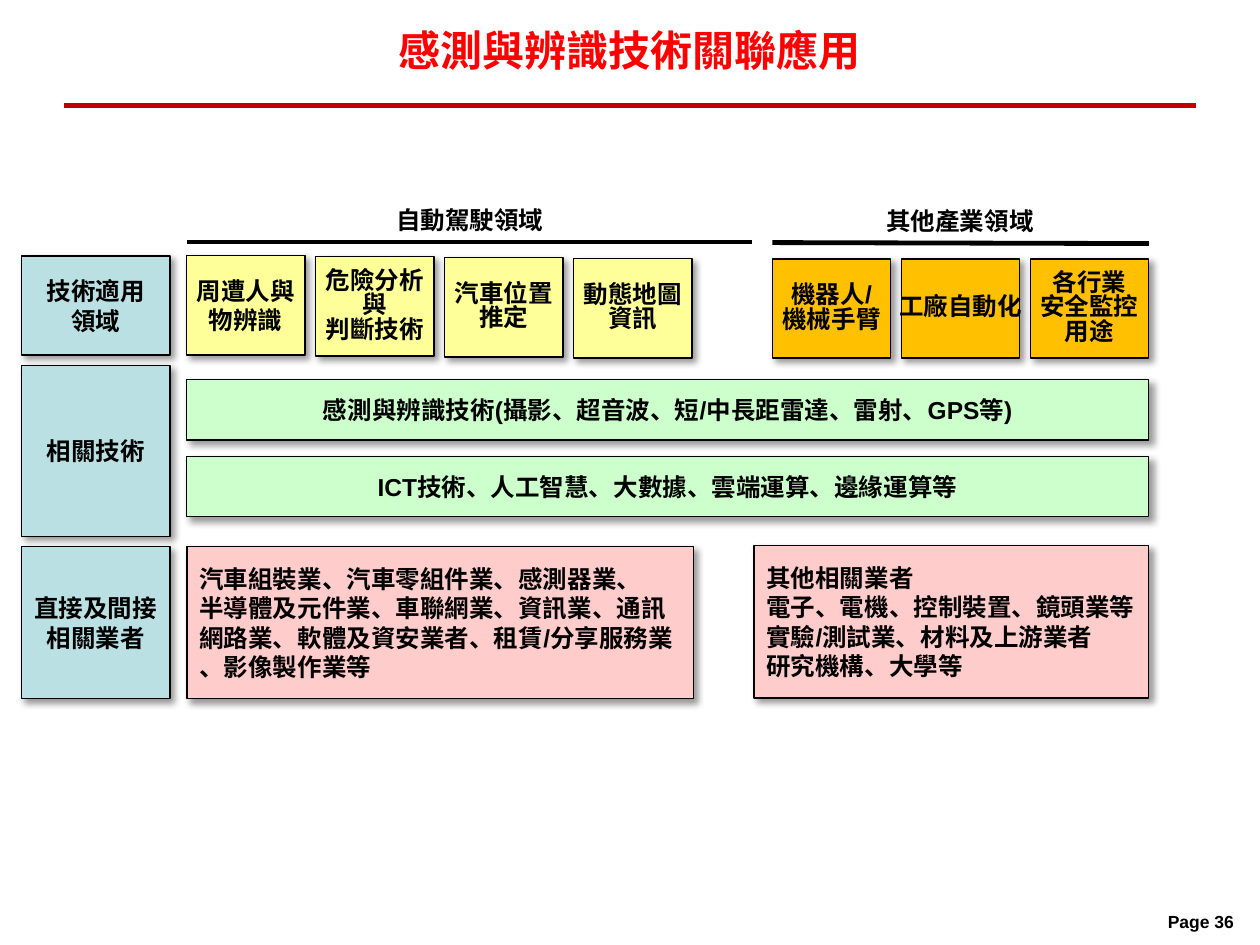
import dataclasses

import lxml.etree
import pptx
import pptx.dml.color
import pptx.enum.shapes
import pptx.enum.text
import pptx.oxml
import pptx.oxml.ns
import pptx.util

Cm = pptx.util.Cm
Pt = pptx.util.Pt
ALIGN = pptx.enum.text.PP_ALIGN
ANCHOR = pptx.enum.text.MSO_ANCHOR


@dataclasses.dataclass(frozen=True)
class Theme:
    font: str = "Arial"
    title_font: str = "Times New Roman"
    title_size: float = 24
    body_size: float = 14
    page_size: float = 10
    leading: float = 14
    black: str = "000000"
    title: str = "FF0000"
    rule: str = "C00000"
    label: str = "BBE0E3"
    driving: str = "FFFF99"
    other: str = "FFC000"
    technology: str = "CCFFCC"
    industry: str = "FFCCCC"


THEME = Theme()
SHADOW = (
    '<a:effectLst %s><a:outerShdw blurRad="50800" dist="38100" dir="2700000" algn="tl" rotWithShape="0">'
    '<a:srgbClr val="000000"><a:alpha val="40000"/></a:srgbClr></a:outerShdw></a:effectLst>'
    % pptx.oxml.ns.nsdecls("a")
)


def rgb(color):
    return pptx.dml.color.RGBColor.from_string(color)


def write(sp, text, align, leading=None, size=THEME.body_size, color=THEME.black, font=THEME.font):
    tf = sp.text_frame
    tf.text = text
    for p in tf.paragraphs:
        p.alignment = align
        if leading:
            p.line_spacing = Pt(leading)
        for r in p.runs:
            r.font.name = font
            r.font.size = Pt(size)
            r.font.bold = True
            r.font.color.rgb = rgb(color)


def add_text(s, box, text, align=ALIGN.CENTER, anchor=ANCHOR.MIDDLE, **style):
    sp = s.shapes.add_textbox(*map(Cm, box))
    sp.text_frame.word_wrap = True
    sp.text_frame.vertical_anchor = anchor
    write(sp, text, align, **style)
    return sp


def add_line(s, start, end, color, width):
    line = s.shapes.add_connector(
        pptx.enum.shapes.MSO_CONNECTOR.STRAIGHT, *map(Cm, start + end))
    line.line.color.rgb = rgb(color)
    line.line.width = Pt(width)
    lxml.etree.SubElement(line._element.spPr, pptx.oxml.ns.qn("a:effectLst"))


def add_card(s, box, text, fill, align=ALIGN.CENTER, leading=None):
    sp = s.shapes.add_shape(pptx.enum.shapes.MSO_SHAPE.RECTANGLE, *map(Cm, box))
    sp.fill.solid()
    sp.fill.fore_color.rgb = rgb(fill)
    sp.line.color.rgb = rgb(THEME.black)
    sp.line.width = Pt(0.75)
    sp._element.spPr.append(pptx.oxml.parse_xml(SHADOW))
    sp.text_frame.word_wrap = False
    sp.text_frame.vertical_anchor = ANCHOR.MIDDLE
    write(sp, text, align, leading)


def add_header(s, box, title):
    x, y, w, h = box
    add_line(s, (x, y + h), (x + w, y + h), THEME.rule, 2.5)
    add_text(s, (x, y, w, 1.75), title, size=THEME.title_size,
             color=THEME.title, font=THEME.title_font)


def add_footer(s, box, text):
    sp = add_text(s, box, text, ALIGN.RIGHT, size=THEME.page_size)
    sp.text_frame.margin_right = Cm(0.43)


def add_labels(s, box, rows):
    x, y, w, _ = box
    for top, height, text in rows:
        add_card(s, (x, y + top, w, height), text, THEME.label)


def add_field(s, box, heading, heading_left, line_end, tiles, fill, drop=0):
    x, y, w, h = box
    tile_w, gap, tile_top = 2.39, 0.21, 1.1
    add_line(s, (x, y + 0.77), (x + w, y + line_end), THEME.black, 2.75)
    add_text(s, (x + heading_left, y, 4.17, 0.76), heading,
             anchor=ANCHOR.TOP, leading=THEME.leading)
    for i, (text, leading) in enumerate(tiles):
        top = y + tile_top - drop * (len(tiles) - 1 - i)
        add_card(s, (x + i * (tile_w + gap), top, tile_w, h - tile_top),
                 text, fill, leading=leading)


def add_technologies(s, box, bars):
    x, y, w, h = box
    bar_h = 1.22
    pitch = (h - bar_h) / (len(bars) - 1)
    for i, text in enumerate(bars):
        add_card(s, (x, y + i * pitch, w, bar_h), text, THEME.technology)


def add_industries(s, box, lines):
    add_card(s, box, "\n".join(lines), THEME.industry, ALIGN.LEFT)


def main():
    prs = pptx.Presentation()
    prs.slide_width, prs.slide_height = Cm(25.4), Cm(19.05)
    s = prs.slides.add_slide(prs.slide_layouts[6])

    add_footer(s, (19.1, 18.24, 6.2, 0.69), "Page 36")
    add_header(s, (1.3, 0.13, 22.8, 2), "感測與辨識技術關聯應用")
    add_labels(s, (0.43, 5.16, 3, 8.93), [
        (0, 2, "技術適用\n領域"),
        (2.21, 3.45, "相關技術"),
        (5.86, 3.07, "直接及間接\n相關業者"),
    ])
    add_field(s, (3.76, 4.11, 11.4, 3.11), "自動駕駛領域", 3.63, 0.77, [
        ("周遭人與\n物辨識", None),
        ("危險分析\n與\n判斷技術", THEME.leading),
        ("汽車位置\n推定", THEME.leading),
        ("動態地圖\n資訊", THEME.leading),
    ], THEME.driving, drop=0.02)
    add_field(s, (15.57, 4.12, 7.59, 3.1), "其他產業領域", 1.7, 0.79, [
        ("機器人/\n機械手臂", THEME.leading),
        ("工廠自動化", THEME.leading),
        ("各行業\n安全監控\n用途", THEME.leading),
    ], THEME.other)
    add_technologies(s, (3.76, 7.65, 19.4, 2.77), [
        "感測與辨識技術(攝影、超音波、短/中長距雷達、雷射、GPS等)",
        "ICT技術、人工智慧、大數據、雲端運算、邊緣運算等",
    ])
    add_industries(s, (3.77, 11.02, 10.21, 3.07), [
        "汽車組裝業、汽車零組件業、感測器業、",
        "半導體及元件業、車聯網業、資訊業、通訊",
        "網路業、軟體及資安業者、租賃/分享服務業",
        "、影像製作業等",
    ])
    add_industries(s, (15.2, 11, 7.96, 3.07), [
        "其他相關業者",
        "電子、電機、控制裝置、鏡頭業等",
        "實驗/測試業、材料及上游業者",
        "研究機構、大學等",
    ])
    prs.save("out.pptx")


if __name__ == "__main__":
    main()
